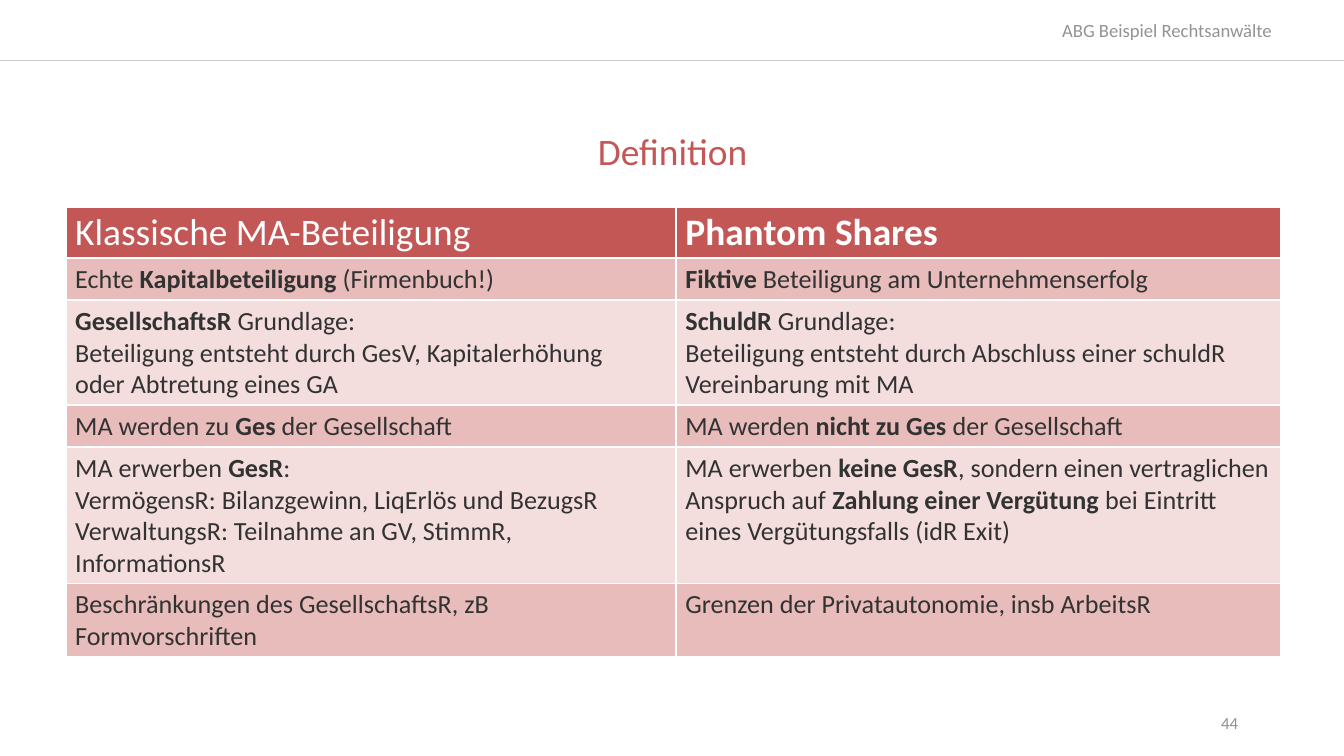
import pptx
import pptx.dml.color
import pptx.enum.shapes
import pptx.enum.text
import pptx.oxml
import pptx.oxml.ns
import pptx.util

Inches = pptx.util.Inches
ALIGN = pptx.enum.text.PP_ALIGN
ANCHOR = pptx.enum.text.MSO_ANCHOR

SLIDE_WIDTH = 10
RED, ROSE, PALE, INK, WHITE = "C25756", "E7BCBB", "F3DDDD", "323232", "FFFFFF"
COLUMN_WIDTHS = [4.54, 4.5]
ROW_HEIGHTS = [0.38, 0.3, 0.75, 0.3, 0.75, 0.3]
COMPARISON = [
    ("Klassische MA-Beteiligung", "**Phantom Shares**"),
    ("Echte **Kapitalbeteiligung** (Firmenbuch!)",
     "**Fiktive** Beteiligung am Unternehmenserfolg"),
    ("**GesellschaftsR **Grundlage:\n"
     "Beteiligung entsteht durch GesV, Kapitalerhöhung\n"
     "oder Abtretung eines GA",
     "**SchuldR** Grundlage:\n"
     "Beteiligung entsteht durch Abschluss einer schuldR Vereinbarung mit MA"),
    ("MA werden zu **Ges** der Gesellschaft",
     "MA werden **nicht zu Ges **der Gesellschaft"),
    ("MA erwerben **GesR**:\n"
     "VermögensR: Bilanzgewinn, LiqErlös und BezugsR\n"
     "VerwaltungsR: Teilnahme an GV, StimmR, InformationsR",
     "MA erwerben **keine GesR**, sondern einen vertraglichen Anspruch auf "
     "**Zahlung einer Vergütung **bei Eintritt eines Vergütungsfalls (idR Exit)"),
    ("Beschränkungen des GesellschaftsR, zB Formvorschriften",
     "Grenzen der Privatautonomie, insb ArbeitsR"),
]


def rgb(value):
    """Turn a hex string into a colour."""
    return pptx.dml.color.RGBColor.from_string(value)


def write_text(frame, text, size, color, align=ALIGN.LEFT, spacing=1.0):
    """Fill a frame with one paragraph per line, bold between double asterisks."""
    frame.word_wrap = True
    for index, line in enumerate(text.split("\n")):
        paragraph = frame.add_paragraph() if index else frame.paragraphs[0]
        paragraph.alignment = align
        paragraph.line_spacing = spacing
        for part, words in enumerate(line.split("**")):
            if words:
                run = paragraph.add_run()
                run.text = words
                run.font.name = "Calibri"
                run.font.size = pptx.util.Pt(size)
                run.font.bold = part % 2 == 1
                run.font.color.rgb = rgb(color)


def add_label(slide, box, text, anchor=ANCHOR.TOP, **text_format):
    """Add a text box at the given left, top, width and height."""
    frame = slide.shapes.add_textbox(*map(Inches, box)).text_frame
    frame.vertical_anchor = anchor
    write_text(frame, text, **text_format)


def add_rule(slide, top, color):
    """Draw a thin line across the full width of the slide."""
    rule = slide.shapes.add_connector(
        pptx.enum.shapes.MSO_CONNECTOR.STRAIGHT,
        Inches(0), Inches(top), Inches(SLIDE_WIDTH), Inches(top))
    rule.line.color.rgb = rgb(color)
    rule.line.width = pptx.util.Pt(0.75)
    rule._element.spPr.append(pptx.oxml.parse_xml(
        f"<a:effectLst {pptx.oxml.ns.nsdecls('a')}/>"))


def set_borders(cell, color):
    """Give a cell one-point borders on all sides."""
    properties = cell._tc.get_or_add_tcPr()
    for side in "LRTB":
        properties.append(pptx.oxml.parse_xml(
            f"<a:ln{side} {pptx.oxml.ns.nsdecls('a')} w='{pptx.util.Pt(1)}'>"
            f"<a:solidFill><a:srgbClr val='{color}'/></a:solidFill></a:ln{side}>"))


def format_cell(cell, text, fill, **text_format):
    """Set the margins, borders, fill and text of a cell."""
    cell.margin_left = cell.margin_right = Inches(0.07)
    cell.margin_top = cell.margin_bottom = Inches(0.04)
    set_borders(cell, WHITE)
    cell.fill.solid()
    cell.fill.fore_color.rgb = rgb(fill)
    write_text(cell.text_frame, text, **text_format)


def add_comparison(slide):
    """Add the table with a red header and alternating rows."""
    table = slide.shapes.add_table(
        len(ROW_HEIGHTS), len(COLUMN_WIDTHS), Inches(0.49), Inches(1.54),
        Inches(sum(COLUMN_WIDTHS)), Inches(sum(ROW_HEIGHTS))).table
    for column, width in zip(table.columns, COLUMN_WIDTHS):
        column.width = Inches(width)
    for index, (row, height) in enumerate(zip(table.rows, ROW_HEIGHTS)):
        row.height = Inches(height)
        for cell, text in zip(row.cells, COMPARISON[index]):
            if index == 0:
                format_cell(cell, text, RED, size=20, color=WHITE, spacing=0.9)
            else:
                format_cell(cell, text, ROSE if index % 2 else PALE,
                            size=14, color=INK)


def main():
    """Build the slide and save it."""
    presentation = pptx.Presentation()
    presentation.slide_width = Inches(SLIDE_WIDTH)
    presentation.slide_height = Inches(SLIDE_WIDTH * 9 / 16)
    slide = presentation.slides.add_slide(presentation.slide_layouts[6])
    add_rule(slide, 0.45, "CCCCCC")
    add_label(slide, (7.54, 0.09, 2.02, 0.27), "ABG Beispiel Rechtsanwälte",
              size=10, color="949391", align=ALIGN.RIGHT)
    add_label(slide, (2.25, 0.94, 5.51, 0.45), "Definition",
              size=20, color=RED, align=ALIGN.CENTER, spacing=0.9)
    add_label(slide, (7.06, 5.23, 2.25, 0.3), "44", anchor=ANCHOR.MIDDLE,
              size=9, color="909090", align=ALIGN.RIGHT)
    add_comparison(slide)
    presentation.save("out.pptx")


if __name__ == "__main__":
    main()
